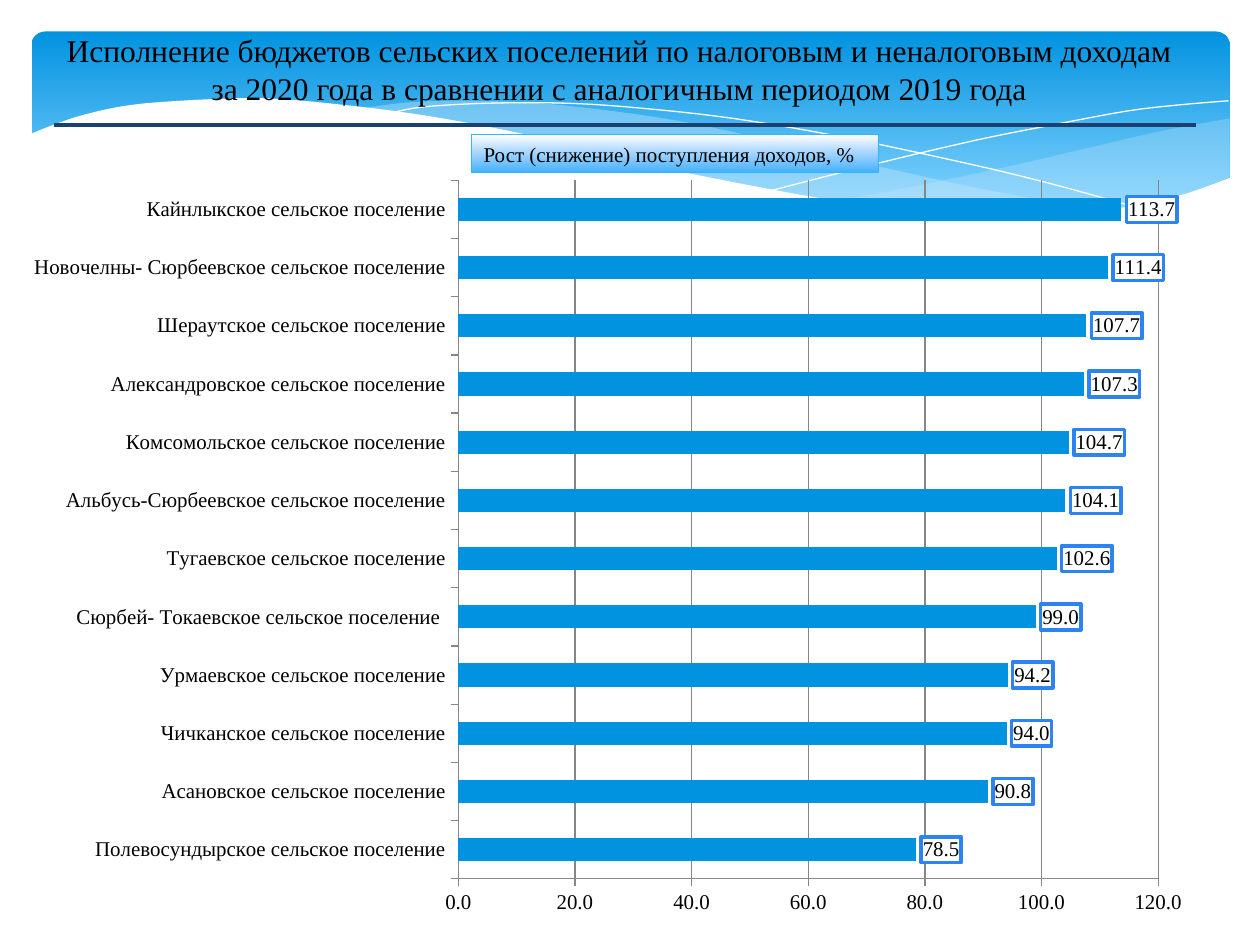
"""Build a slide comparing rural settlement budget revenue in 2020 and 2019."""
from lxml import etree
from pptx import Presentation
from pptx import util as u
from pptx.chart import data as cd
from pptx.dml import color
from pptx.enum import chart as ce, shapes, text
from pptx.oxml import ns, parse_xml

Pt = u.Pt
THEME = dict(font="Times New Roman", base="Calibri", big=18, small=12, ink="000000",
             bar="0293E0", sky="83D3FE", wave="C6E7FC", white="FFFFFF", rule="1B4171",
             mid="ACD7FF", deep="42B0FD", edge="31B6FD", frame="2E83F2", grid="868686")

TITLE = ("Исполнение бюджетов сельских поселений по налоговым и неналоговым доходам "
         "за 2020 года в сравнении с аналогичным периодом 2019 года")
NOTE = "Рост (снижение) поступления доходов, %"
ROWS = [
    ("Полевосундырское сельское поселение", 78.5),
    ("Асановское сельское поселение", 90.8),
    ("Чичканское сельское поселение", 94.0),
    ("Урмаевское сельское поселение", 94.2),
    ("Сюрбей- Токаевское сельское поселение ", 99.0),
    ("Тугаевское сельское поселение", 102.6),
    ("Альбусь-Сюрбеевское сельское поселение", 104.1),
    ("Комсомольское сельское поселение", 104.7),
    ("Александровское сельское поселение", 107.3),
    ("Шераутское сельское поселение", 107.7),
    ("Новочелны- Сюрбеевское сельское поселение", 111.4),
    ("Кайнлыкское сельское поселение", 113.7),
]
BANDS = [
    ("wave", 29, [
        [(702.7, 67.7), (663, 75), (620, 85), (580, 94.3), (525, 106), (476, 115.2)],
        [(476, 115.2), (508, 118.8), (545, 122.4), (578, 123.8), (615, 122.4),
         (646, 118.8), (673, 112.3), (702.7, 101.5)]]),
    ("wave", 40, [
        [(643, 120.2), (602.6, 115.2), (558, 107.3), (508.3, 96.5), (452.9, 83.5),
         (409.7, 73.4), (370, 66.2), (318.2, 59.8), (273.6, 57.6), (236, 58.3), (206, 62)],
        [(206, 62), (246.2, 67.7), (290.9, 76.3), (353.5, 90.7), (407.5, 103),
         (456.5, 112.3), (500.4, 118.8), (548, 123.1), (589, 124.6), (617, 123.1),
         (643, 120.2)]]),
    (None, 100, [
        [(222.5, 64.8), (241.2, 61.2), (278.6, 59), (324, 59), (367.2, 61.9),
         (419, 67.7), (478.8, 77.8), (547.2, 92.2), (598.3, 104.4), (653, 119.5)]]),
    (None, 100, [
        [(441.4, 108.7), (500.4, 93.6), (558.7, 79.9), (602, 71.3), (644.4, 63.4),
         (675.4, 59.8), (702, 57.6)]]),
    ("white", 100, [
        [(703.4, 101.5), (669.6, 113), (630, 120.2), (582.5, 123.1), (535.7, 121),
         (481, 115.2), (416.9, 103.7), (362.2, 92.2), (301, 77), (244, 66.2),
         (195, 59.8), (152, 56.2), (116, 56.9), (76.3, 59.8), (48.2, 65.5),
         (28.8, 72), (16.6, 77)],
        [(16.6, 161.3), (703.4, 161.3)]]),
]


def rgb(key):
    """Return a theme colour."""
    return color.RGBColor.from_string(THEME[key])


def style(font, size="small"):
    """Apply the theme typeface, size and ink to a font."""
    font.name, font.size = THEME["font"], Pt(THEME[size])
    font.color.rgb = rgb("ink")


def smooth(knots, steps=5):
    """Return points of a Catmull-Rom curve through the knots."""
    ends = [knots[0], *knots, knots[-1]]
    out = [knots[0]]
    for a, b, c, d in zip(ends, ends[1:], ends[2:], ends[3:]):
        for i in range(1, steps + 1):
            t = i / steps
            out.append(tuple(
                (2 * q + (r - p) * t + (2 * p - 5 * q + 4 * r - s) * t ** 2
                 + (3 * q - p - 3 * r + s) * t ** 3) / 2
                for p, q, r, s in zip(a, b, c, d)))
    return out


def fade(shape, stops):
    """Fill a shape with a top-down gradient."""
    shape.fill.gradient()
    shape.fill.gradient_angle = 270
    items = shape._element.spPr.find(".//" + ns.qn("a:gsLst"))
    for old in list(items):
        items.remove(old)
    for pos, key in stops:
        stop = etree.SubElement(items, ns.qn("a:gs"), pos=str(pos * 1000))
        etree.SubElement(stop, ns.qn("a:srgbClr"), val=THEME[key])


def band(slide, key, alpha, edges):
    """Draw one wave, as a filled outline or as a thin white line."""
    pts = [(Pt(x), Pt(y)) for edge in edges for x, y in smooth(edge)]
    path = slide.shapes.build_freeform(*pts[0])
    path.add_line_segments(pts[1:], close=key is not None)
    shape = path.convert_to_shape()
    shape.shadow.inherit = False
    if key is None:
        shape.fill.background()
        shape.line.color.rgb, shape.line.width = rgb("white"), Pt(0)
        return
    shape.fill.solid()
    shape.fill.fore_color.rgb = rgb(key)
    shape.line.fill.background()
    if alpha < 100:
        tone = shape._element.spPr.find(".//" + ns.qn("a:srgbClr"))
        etree.SubElement(tone, ns.qn("a:alpha"), val=str(alpha * 1000))


def panel(slide, kind, box, stops):
    """Add a preset shape with a gradient fill."""
    shape = slide.shapes.add_shape(kind, *map(Pt, box))
    shape.shadow.inherit = False
    fade(shape, stops)
    return shape


def write(frame, words, size, align):
    """Write one run into a text frame."""
    frame.word_wrap = True
    frame.vertical_anchor = text.MSO_ANCHOR.MIDDLE
    para = frame.paragraphs[0]
    para.alignment = align
    run = para.add_run()
    run.text = words
    style(run.font, size)


def bars(slide):
    """Add the bar chart with framed value labels."""
    data = cd.CategoryChartData(number_format="0.0")
    data.categories = [name for name, _ in ROWS]
    data.add_series("Series 1", [val for _, val in ROWS])
    chart = slide.shapes.add_chart(ce.XL_CHART_TYPE.BAR_CLUSTERED,
                                   *map(Pt, (19.5, 94.3, 669, 436.3)), data).chart
    chart.has_legend = chart.has_title = False
    chart.font.name, chart.font.size = THEME["base"], Pt(THEME["big"])
    for axis in (chart.category_axis, chart.value_axis):
        style(axis.tick_labels.font)
        axis.major_tick_mark = ce.XL_TICK_MARK.OUTSIDE
        axis.format.line.color.rgb = rgb("grid")
    axis = chart.value_axis
    axis.minimum_scale, axis.maximum_scale, axis.major_unit = 0, 120, 20
    axis.has_major_gridlines = True
    axis.major_gridlines.format.line.color.rgb = rgb("grid")
    axis.tick_labels.number_format = "0.0"
    axis.tick_labels.number_format_is_linked = False
    plot = chart.plots[0]
    plot.gap_width, plot.vary_by_categories = 150, False
    fill = plot.series[0].format.fill
    fill.solid()
    fill.fore_color.rgb = rgb("bar")
    tags = plot.series[0].data_labels
    tags.show_value = True
    tags.number_format, tags.number_format_is_linked = "0.0", False
    tags.position = ce.XL_LABEL_POSITION.OUTSIDE_END
    style(tags.font)
    solid = '<a:solidFill><a:srgbClr val="%s"/></a:solidFill>'
    tags._element.find(ns.qn("c:numFmt")).addnext(parse_xml(
        f'<c:spPr {ns.nsdecls("c", "a")}>{solid % THEME["white"]}'
        f'<a:ln w="{Pt(2)}">{solid % THEME["frame"]}</a:ln></c:spPr>'))
    area = chart._chartSpace.chart.plotArea
    for old in area.findall(ns.qn("c:layout")):
        area.remove(old)
    sides = "".join(f'<c:{k} val="{v}"/>' for k, v in (
        ("layoutTarget", "inner"), ("xMode", "edge"), ("yMode", "edge"),
        ("x", 0.36), ("y", 0.02), ("w", 0.6), ("h", 0.915)))
    area.insert(0, parse_xml(f'<c:layout {ns.nsdecls("c")}><c:manualLayout>{sides}'
                             '</c:manualLayout></c:layout>'))


def main():
    """Assemble and save the slide."""
    deck = Presentation()
    deck.slide_width, deck.slide_height = Pt(720), Pt(540)
    slide = deck.slides.add_slide(deck.slide_layouts[6])
    kinds = shapes.MSO_SHAPE
    sky = panel(slide, kinds.ROUNDED_RECTANGLE, (18, 18, 684.7, 112.3),
                [(0, "bar"), (90, "sky")])
    sky.adjustments[0] = 0.07
    sky.line.fill.background()
    for item in BANDS:
        band(slide, *item)
    head = slide.shapes.add_textbox(*map(Pt, (25.2, 20.9, 657.4, 56.9))).text_frame
    head.margin_top, head.margin_bottom = Pt(0), Pt(20)
    write(head, TITLE, "big", text.PP_ALIGN.CENTER)
    rule = slide.shapes.add_connector(shapes.MSO_CONNECTOR.STRAIGHT,
                                      *map(Pt, (31, 71.3, 683.3, 71.3)))
    rule.line.color.rgb, rule.line.width = rgb("rule"), Pt(2.25)
    etree.SubElement(rule._element.spPr, ns.qn("a:effectLst"))
    bars(slide)
    note = panel(slide, kinds.RECTANGLE, (269.3, 77, 232.6, 21.8),
                 [(0, "white"), (44, "mid"), (100, "deep")])
    note.line.color.rgb, note.line.width = rgb("edge"), Pt(0.75)
    write(note.text_frame, NOTE, "small", text.PP_ALIGN.LEFT)
    deck.save("out.pptx")


if __name__ == "__main__":
    main()
